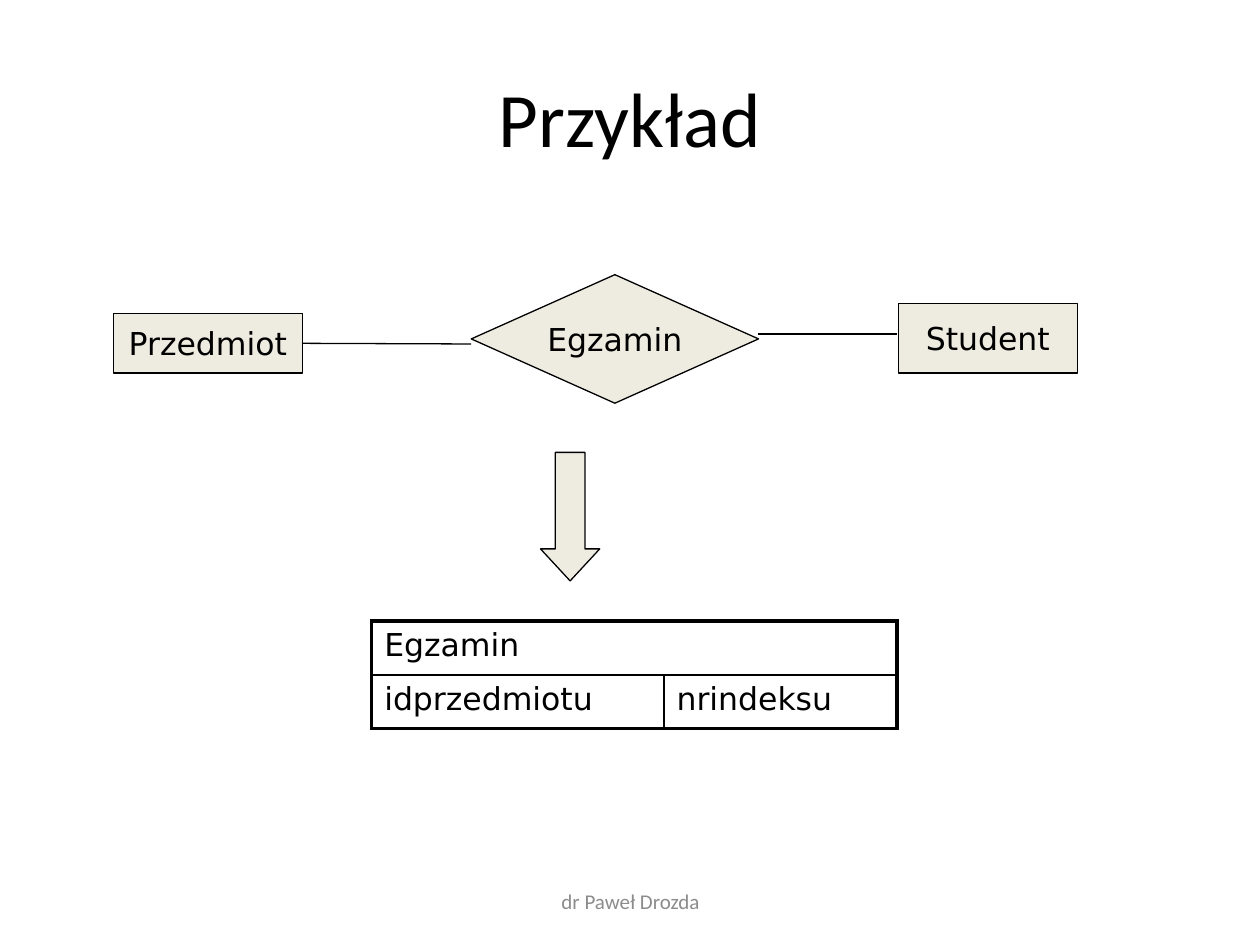
from dataclasses import dataclass

import lxml.etree
import pptx
import pptx.dml.color
import pptx.enum.shapes
import pptx.enum.text
import pptx.oxml.ns
import pptx.util

Shape = pptx.enum.shapes.MSO_SHAPE
Align = pptx.enum.text.PP_ALIGN
Anchor = pptx.enum.text.MSO_ANCHOR
RIGHT_SIDE = 3


def color(value):
    return pptx.dml.color.RGBColor.from_string(value)


def child(parent, tag, **attributes):
    return lxml.etree.SubElement(parent, pptx.oxml.ns.qn(tag), attributes)


@dataclass
class Theme:
    ink: str = "000000"
    muted: str = "8C8C8C"
    fill: str = "EEECE1"
    heading_font: str = "Calibri"
    body_font: str = "DejaVu Sans"
    title_size: float = 44
    body_size: float = 18
    footer_size: float = 12
    line: float = 0.75
    inner_border: float = 1
    outer_border: float = 2.25


class Page:
    """One slide on a grid of 100 columns by 75 rows."""

    def __init__(self, deck, theme):
        self.theme = theme
        self.column = deck.slide_width / 100
        self.row = deck.slide_height / 75
        self.slide = deck.slides.add_slide(deck.slide_layouts[5])

    def grid(self, *lengths):
        """Turn alternating columns and rows into lengths."""
        units = (self.column, self.row)
        return [pptx.util.Emu(round(length * units[i % 2]))
                for i, length in enumerate(lengths)]

    def set_text(self, frame, text, size, font, ink, align=Align.CENTER):
        frame.text = text
        para = frame.paragraphs[0]
        para.alignment = align
        para.font.size = pptx.util.Pt(size)
        para.font.name = font
        para.font.color.rgb = color(ink)

    def outline(self, line):
        line.color.rgb = color(self.theme.ink)
        line.width = pptx.util.Pt(self.theme.line)

    def title(self, text, *place):
        box = self.slide.shapes.title
        box.left, box.top, box.width, box.height = self.grid(*place)
        box.text_frame.vertical_anchor = Anchor.MIDDLE
        self.set_text(box.text_frame, text, self.theme.title_size,
                      self.theme.heading_font, self.theme.ink)

    def footer(self, text, *place):
        frame = self.slide.shapes.add_textbox(*self.grid(*place)).text_frame
        frame.word_wrap = True
        frame.vertical_anchor = Anchor.MIDDLE
        self.set_text(frame, text, self.theme.footer_size,
                      self.theme.heading_font, self.theme.muted)

    def shape(self, kind, *place, text=""):
        shape = self.slide.shapes.add_shape(kind, *self.grid(*place))
        shape.shadow.inherit = False
        shape.fill.solid()
        shape.fill.fore_color.rgb = color(self.theme.fill)
        self.outline(shape.line)
        if text:
            shape.text_frame.word_wrap = False
            shape.text_frame.vertical_anchor = Anchor.MIDDLE
            self.set_text(shape.text_frame, text, self.theme.body_size,
                          self.theme.body_font, self.theme.ink)
        return shape

    def line(self, *ends):
        line = self.slide.shapes.add_connector(
            pptx.enum.shapes.MSO_CONNECTOR.STRAIGHT, *self.grid(*ends))
        self.outline(line.line)
        child(line._element.spPr, "a:effectLst")
        return line

    def table(self, heading, fields, left, top, widths, row_height):
        """Draw a relation: its name across the top, its fields below."""
        frame = self.slide.shapes.add_table(
            2, len(fields), *self.grid(left, top, sum(widths), 2 * row_height))
        table = frame.table
        table.first_row = table.horz_banding = False
        for column, width in zip(table.columns, widths):
            column.width = self.grid(width)[0]
        table.cell(0, 0).merge(table.cell(0, len(fields) - 1))
        labels = {(0, 0): heading}
        labels.update({(1, i): field for i, field in enumerate(fields)})
        for r in range(2):
            for c in range(len(fields)):
                cell = table.cell(r, c)
                cell.fill.background()
                if (r, c) in labels:
                    self.set_text(cell.text_frame, labels[r, c],
                                  self.theme.body_size, self.theme.body_font,
                                  self.theme.ink, Align.LEFT)
                last = c + cell.span_width == len(fields)
                self.borders(cell, L=c == 0, R=last, T=r == 0, B=r == 1)

    def borders(self, cell, **outer):
        """Give outer sides the thick border and the others the thin one."""
        properties = cell._tc.get_or_add_tcPr()
        for i, (side, is_outer) in enumerate(outer.items()):
            width = self.theme.outer_border if is_outer else self.theme.inner_border
            border = child(properties, "a:ln" + side, w=str(pptx.util.Pt(width)))
            child(child(border, "a:solidFill"), "a:srgbClr", val=self.theme.ink)
            properties.insert(i, border)


def main():
    deck = pptx.Presentation()
    deck.slide_width = pptx.util.Inches(10)
    deck.slide_height = pptx.util.Inches(7.5)
    page = Page(deck, Theme())

    page.title("Przykład", 5, 3, 90, 12.5)
    page.footer("dr Paweł Drozda", 34.2, 69.5, 31.7, 4)

    page.shape(Shape.FLOWCHART_PROCESS, 71.3, 24.1, 14.2, 5.5, text="Student")
    page.shape(Shape.FLOWCHART_DECISION, 37.4, 21.8, 22.8, 10.2, text="Egzamin")
    subject = page.shape(Shape.FLOWCHART_PROCESS, 9, 24.9, 15, 4.7,
                         text="Przedmiot")
    subject_line = page.line(24, 27.3, 37.4, 27.3)
    subject_line.begin_connect(subject, RIGHT_SIDE)
    page.line(60.2, 26.5, 71.2, 26.5)

    arrow = page.shape(Shape.DOWN_ARROW, 42.9, 35.9, 4.7, 10.2)
    arrow.adjustments[1] = 0.54

    page.table("Egzamin", ["idprzedmiotu", "nrindeksu"],
               29.5, 49.3, [23.2, 18.5], 4.27)

    deck.save("out.pptx")


if __name__ == "__main__":
    main()
